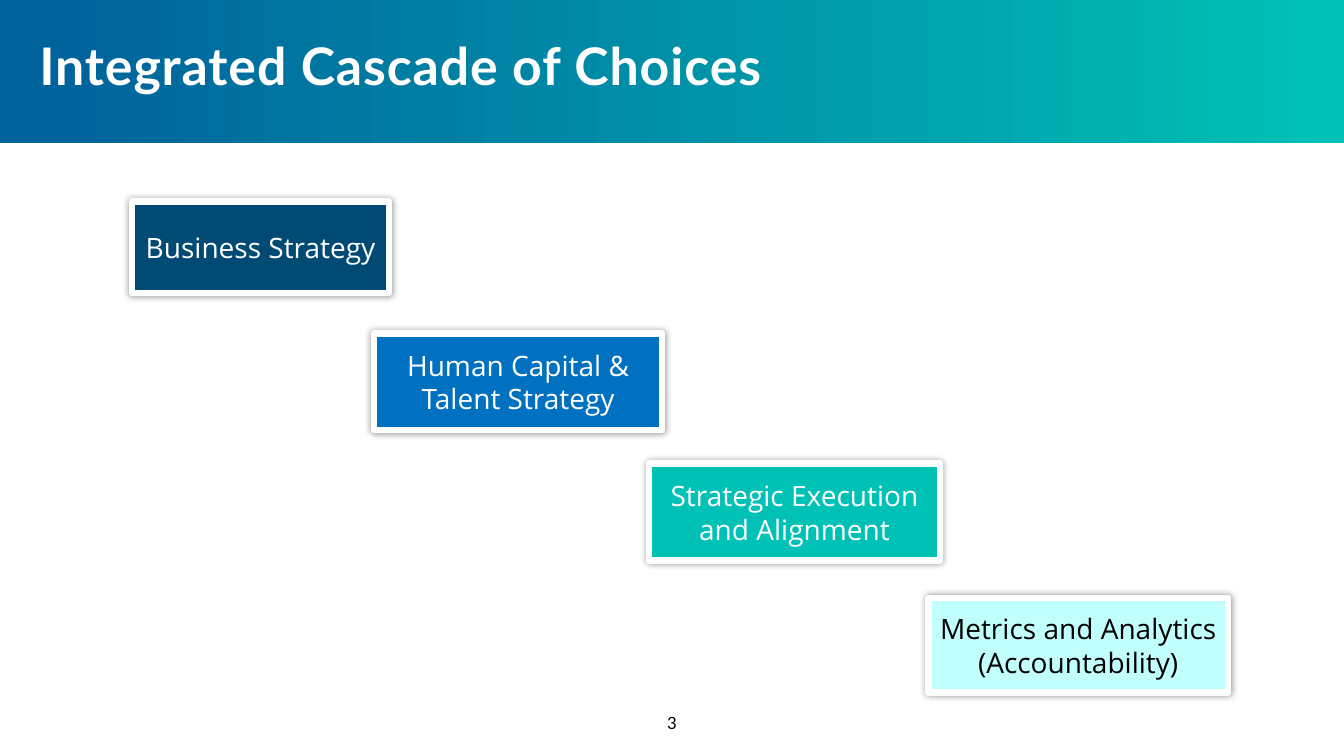
from dataclasses import dataclass

from lxml import etree
from pptx import Presentation
from pptx import util as u
from pptx.dml.color import RGBColor
from pptx.enum import shapes, text
from pptx.oxml import ns


@dataclass(frozen=True)
class Theme:
    blue: str = "00629B"
    navy: str = "004A74"
    azure: str = "0070C0"
    teal: str = "00C1B5"
    aqua: str = "C0FFFB"
    white: str = "FFFFFF"
    black: str = "000000"
    heading_font: str = "Lato"
    body_font: str = "Open Sans"
    title_size: float = 37
    box_size: float = 20
    number_size: float = 12
    border: float = 4.5
    inset: float = 0.05


class SlideBuilder:
    def __init__(self, deck, theme):
        self.deck, self.theme = deck, theme
        self.page = deck.slides.add_slide(deck.slide_layouts[5])

    def background(self, start, end):
        fill = self.page.background.fill
        fill.gradient()
        fill.gradient_angle = 0
        for stop, color, position in zip(fill.gradient_stops, (start, end), (0.03, 1)):
            stop.color.rgb = RGBColor.from_string(color)
            stop.position = position

    def set_words(self, box, words, font, size, color, align, anchor, bold=False):
        frame = box.text_frame
        frame.text = words
        frame.word_wrap = True
        frame.auto_size = text.MSO_AUTO_SIZE.NONE
        frame.vertical_anchor = anchor
        frame.margin_left = frame.margin_right = u.Inches(self.theme.inset)
        frame.margin_top = frame.margin_bottom = u.Inches(self.theme.inset)
        para = frame.paragraphs[0]
        para.alignment = align
        span = para.runs[0]
        span.font.name, span.font.size, span.font.bold = font, u.Pt(size), bold
        span.font.color.rgb = RGBColor.from_string(color)
        return para

    def title(self, words, left, top, width, height):
        box = self.page.shapes.title
        box.left, box.top = u.Inches(left), u.Inches(top)
        box.width, box.height = u.Inches(width), u.Inches(height)
        para = self.set_words(box, words, self.theme.heading_font,
                              self.theme.title_size, self.theme.white,
                              text.PP_ALIGN.LEFT, text.MSO_ANCHOR.TOP, bold=True)
        para.line_spacing = 0.9
        # Letter spacing in hundredths of a point
        para.runs[0].font._element.set("spc", "70")

    def rectangle(self, left, top, width, height, color):
        box = self.page.shapes.add_shape(
            shapes.MSO_SHAPE.RECTANGLE, u.Inches(left), u.Inches(top),
            u.Inches(width), u.Inches(height))
        box.shadow.inherit = False
        box.fill.solid()
        box.fill.fore_color.rgb = RGBColor.from_string(color)
        box.line.fill.background()
        return box

    def panel(self, left, top, width, height, color):
        box = self.rectangle(left, top, width, height, color)
        # Behind the title
        self.page.shapes._spTree.insert(2, box._element)

    def choice(self, words, left, top, width, height, color, ink):
        box = self.rectangle(left, top, width, height, color)
        box.line.color.rgb = RGBColor.from_string(self.theme.white)
        box.line.width = u.Pt(self.theme.border)
        self.soft_shadow(box)
        self.set_words(box, words, self.theme.body_font, self.theme.box_size, ink,
                       text.PP_ALIGN.CENTER, text.MSO_ANCHOR.MIDDLE)

    def soft_shadow(self, box):
        effects = box._element.spPr.find(ns.qn("a:effectLst"))
        shadow = etree.SubElement(effects, ns.qn("a:outerShdw"),
                                  blurRad=str(u.Pt(5)), dist="0", dir="0",
                                  algn="ctr", rotWithShape="0")
        color = etree.SubElement(shadow, ns.qn("a:srgbClr"), val=self.theme.black)
        etree.SubElement(color, ns.qn("a:alpha"), val="40000")

    def page_number(self, number, left, top, width, height):
        box = self.page.shapes.add_textbox(u.Inches(left), u.Inches(top),
                                           u.Inches(width), u.Inches(height))
        self.set_words(box, number, self.theme.heading_font, self.theme.number_size,
                       self.theme.black, text.PP_ALIGN.CENTER, text.MSO_ANCHOR.TOP)


def main():
    theme = Theme()
    deck = Presentation()
    deck.slide_width, deck.slide_height = u.Inches(13.33), u.Inches(7.5)
    builder = SlideBuilder(deck, theme)

    # Gradient header above a white content panel
    builder.background(theme.blue, theme.teal)
    builder.panel(0, 1.42, 13.33, 6.08, theme.white)
    builder.title("Integrated Cascade of Choices", 0.34, 0.35, 12.46, 0.66)

    # Cascade of choices, from strategy down to metrics
    choices = [
        ("Business Strategy", 1.31, 2, 2.55, 0.91, theme.navy, theme.white),
        ("Human Capital & Talent Strategy", 3.71, 3.31, 2.86, 0.96,
         theme.azure, theme.white),
        ("Strategic Execution and Alignment", 6.44, 4.6, 2.88, 0.96,
         theme.teal, theme.white),
        ("Metrics and Analytics (Accountability)", 9.21, 5.93, 2.97, 0.94,
         theme.aqua, theme.black),
    ]
    for choice in choices:
        builder.choice(*choice)

    # Page number
    builder.page_number("3", 0, 7.02, 13.33, 0.4)

    deck.save("out.pptx")


if __name__ == "__main__":
    main()
